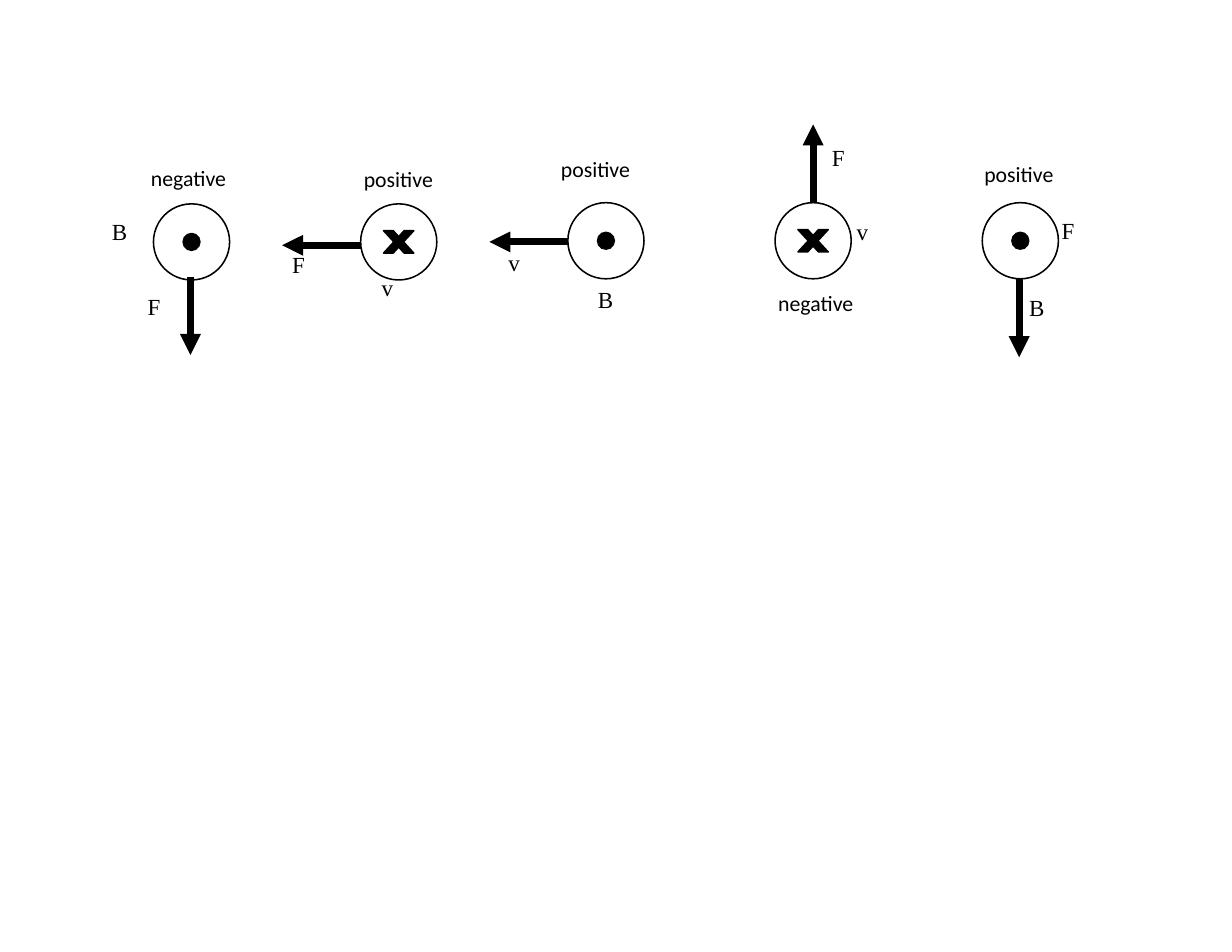
from dataclasses import dataclass

from pptx import Presentation
from pptx import util as u
from pptx.dml.color import RGBColor
from pptx.enum import shapes, text
from pptx.oxml.ns import qn
from lxml import etree

BLACK = RGBColor(0x00, 0x00, 0x00)
SLIDE_W, SLIDE_H = 11, 8.5
FIRST_X, COLUMN = 1.71, 1.85
RING, DOT, ARROW = 0.68, 0.15, 0.7
CROSS_W, CROSS_H, CROSS_SLANT = 0.27, 0.2, 0.92
UP, DOWN, LEFT = (0, -1), (0, 1), (-1, 0)
CHARGE_WIDTHS = {"negative": 1.2, "positive": 0.97}


@dataclass
class Charge:
    """One charge; its offsets are measured from the centre of its ring."""
    row: float
    symbol: str
    arrow_start: tuple
    direction: tuple
    sign: str
    sign_at: tuple
    vectors: dict


CHARGES = [
    Charge(2.16, "dot", (-0.01, 0.31), DOWN, "negative", (-0.46, -0.74),
           {"B": (-0.81, -0.27), "F": (-0.49, 0.4)}),
    Charge(2.16, "cross", (-0.34, 0.03), LEFT, "positive", (-0.41, -0.73),
           {"F": (-1.05, 0.03), "v": (-0.25, 0.23)}),
    Charge(2.15, "dot", (-0.34, 0.01), LEFT, "positive", (-0.5, -0.81),
           {"B": (-0.17, 0.35), "v": (-0.97, 0.02)}),
    Charge(2.15, "cross", (0, -0.34), UP, "negative", (-0.41, 0.39),
           {"F": (0.07, -0.92), "v": (0.29, -0.26)}),
    Charge(2.15, "dot", (-0.01, 0.34), DOWN, "positive", (-0.42, -0.76),
           {"F": (0.27, -0.27), "B": (-0.02, 0.42)}),
]


def add_outline(group, kind, center, width, height, filled):
    """Add a black-lined preset shape around a centre point."""
    x, y = center
    outline = group.shapes.add_shape(
        kind, u.Inches(x - width / 2), u.Inches(y - height / 2),
        u.Inches(width), u.Inches(height))
    outline.shadow.inherit = False
    if filled:
        outline.fill.solid()
        outline.fill.fore_color.rgb = BLACK
    else:
        outline.fill.background()
    outline.line.color.rgb = BLACK
    outline.line.width = u.Pt(1)
    return outline


def add_symbol(group, symbol, center):
    """Draw a dot (out of the page) or a cross (into the page)."""
    if symbol == "dot":
        add_outline(group, shapes.MSO_SHAPE.OVAL, center, DOT, DOT, True)
        return
    for mirrored in (False, True):
        stroke = add_outline(group, shapes.MSO_SHAPE.PARALLELOGRAM, center,
                             CROSS_W, CROSS_H, True)
        stroke.adjustments[0] = CROSS_SLANT
        if mirrored:
            stroke._element.spPr.find(qn("a:xfrm")).set("flipH", "1")


def add_arrow(group, start, direction):
    """Add a thick vector arrow of fixed length."""
    end = [s + ARROW * d for s, d in zip(start, direction)]
    arrow = group.shapes.add_connector(
        shapes.MSO_CONNECTOR.STRAIGHT, *(u.Inches(n) for n in (*start, *end)))
    arrow.line.color.rgb = BLACK
    arrow.line.width = u.Pt(4.5)
    etree.SubElement(arrow.line._get_or_add_ln(), qn("a:tailEnd"), type="triangle")
    etree.SubElement(arrow._element.spPr, qn("a:effectLst"))


def add_label(group, words, corner, size, font, points):
    """Add a one-run label with its top-left corner at the given point."""
    label = group.shapes.add_textbox(*(u.Inches(n) for n in (*corner, *size)))
    frame = label.text_frame
    frame.word_wrap = True
    frame.auto_size = text.MSO_AUTO_SIZE.SHAPE_TO_FIT_TEXT
    run = frame.paragraphs[0].add_run()
    run.text = words
    run.font.name = font
    run.font.size = u.Pt(points)
    run.font.color.rgb = BLACK


def add_charge(slide, charge, center):
    """Draw one charge with its ring, symbol, arrow and labels."""
    def place(offset):
        return center[0] + offset[0], center[1] + offset[1]

    group = slide.shapes.add_group_shape()
    add_symbol(group, charge.symbol, center)
    add_outline(group, shapes.MSO_SHAPE.OVAL, center, RING, RING, False)
    add_arrow(group, place(charge.arrow_start), charge.direction)
    add_label(group, charge.sign, place(charge.sign_at),
              (CHARGE_WIDTHS[charge.sign], 0.34), "Calibri", 14)
    for vector, offset in charge.vectors.items():
        add_label(group, vector, place(offset), (0.47, 0.56), "Times New Roman", 14.8)


def main():
    """Build the row of charges and save the slide."""
    deck = Presentation()
    deck.slide_width, deck.slide_height = u.Inches(SLIDE_W), u.Inches(SLIDE_H)
    slide = deck.slides.add_slide(deck.slide_layouts[6])
    for column, charge in enumerate(CHARGES):
        add_charge(slide, charge, (FIRST_X + column * COLUMN, charge.row))
    deck.save("out.pptx")


if __name__ == "__main__":
    main()
